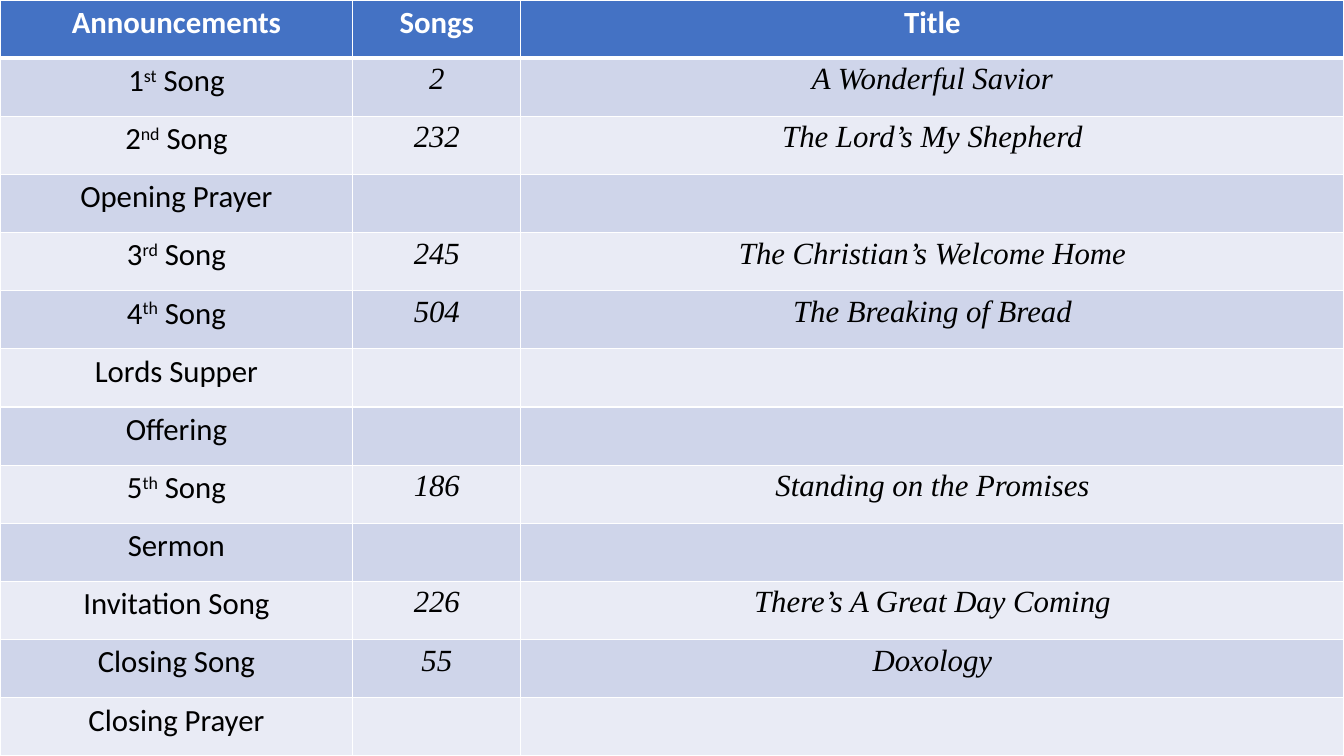
"""Build a slide with the order of worship as a full-page table."""
from lxml.etree import SubElement as Sub
from pptx import Presentation
from pptx.dml.color import RGBColor as Rgb
from pptx.enum.text import PP_ALIGN as Align
from pptx.oxml.ns import qn
from pptx.util import Pt

WIDE, HIGH = 960, 540
COLS = [252, 120, 588]
HUES = {"head": "4472C4", "odd": "CFD5EA", "even": "E9EBF5",
        "white": "FFFFFF", "black": "000000"}
ROWS = [
    ("Announcements", "Songs", "Title"),
    ("1^st^ Song", "2", "A Wonderful Savior"),
    ("2^nd^ Song", "232", "The Lord’s My Shepherd"),
    ("Opening Prayer", "", ""),
    ("3^rd^ Song", "245", "The Christian’s Welcome Home"),
    ("4^th^ Song", "504", "The Breaking of Bread"),
    ("Lords Supper", "", ""),
    ("Offering", "", ""),
    ("5^th^ Song", "186", "Standing on the Promises"),
    ("Sermon", "", ""),
    ("Invitation Song", "226", "There’s A Great Day Coming"),
    ("Closing Song", "55", "Doxology"),
    ("Closing Prayer", "", ""),
]


def edge(cell, row):
    """Draw the white cell borders, thick below the header."""
    props = cell._tc.get_or_add_tcPr()
    thick = {"T": row == 1, "B": row == 0}
    for side in "LRTB":
        width = Pt(3 if thick.get(side) else 1)
        line = Sub(props, qn(f"a:ln{side}"), w=str(width))
        fill = Sub(line, qn("a:solidFill"))
        Sub(fill, qn("a:srgbClr"), val=HUES["white"])


def write(cell, text, row, col):
    """Write centred text, raising the parts between carets."""
    cell.margin_left = cell.margin_right = Pt(6)
    cell.margin_top = cell.margin_bottom = Pt(3)
    para = cell.text_frame.paragraphs[0]
    para.alignment = Align.CENTER
    song = row > 0 and col > 0
    for i, part in enumerate(text.split("^")):
        if not part:
            continue
        run = para.add_run()
        run.text = part
        font = run.font
        font.name = "Times New Roman" if song else "Calibri"
        font.size = Pt(22)
        font.bold = row == 0
        font.italic = song
        font.color.rgb = Rgb.from_string(HUES["black" if row else "white"])
        if i % 2:
            font._element.set("baseline", "30000")


def main():
    """Lay out the table and save the deck."""
    deck = Presentation()
    deck.slide_width, deck.slide_height = Pt(WIDE), Pt(HIGH)
    slide = deck.slides.add_slide(deck.slide_layouts[6])
    frame = slide.shapes.add_table(len(ROWS), len(COLS), 0, 0, Pt(WIDE), Pt(HIGH))
    table = frame.table
    for col, width in zip(table.columns, COLS):
        col.width = Pt(width)
    for r, texts in enumerate(ROWS):
        table.rows[r].height = Pt(HIGH / len(ROWS))
        hue = HUES["head" if r == 0 else "odd" if r % 2 else "even"]
        for c, text in enumerate(texts):
            cell = table.cell(r, c)
            edge(cell, r)
            cell.fill.solid()
            cell.fill.fore_color.rgb = Rgb.from_string(hue)
            write(cell, text, r, c)
    deck.save("out.pptx")


if __name__ == "__main__":
    main()
